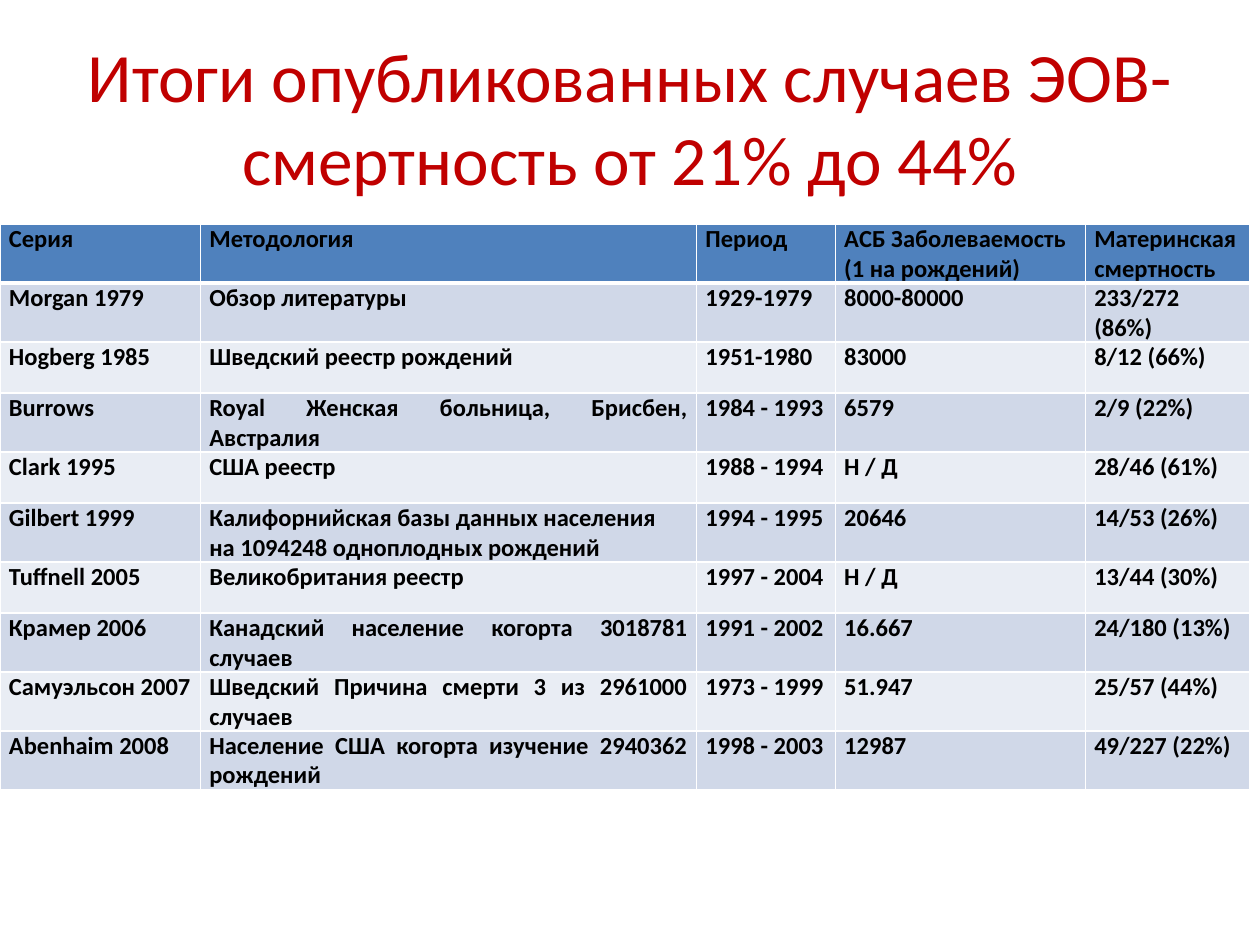
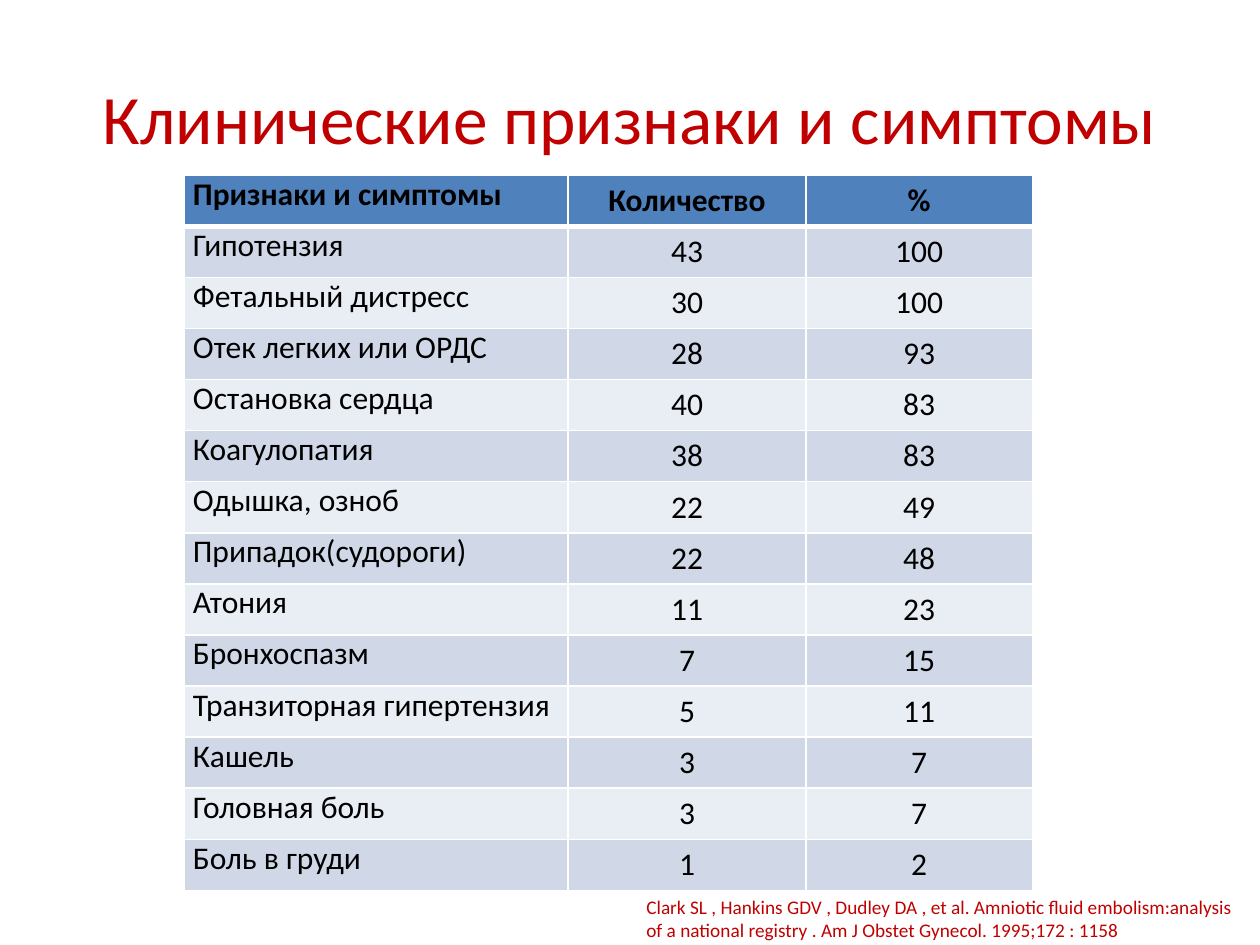
from dataclasses import dataclass

from lxml import etree
from pptx import Presentation
from pptx.dml.color import RGBColor
from pptx.enum.text import MSO_ANCHOR, PP_ALIGN
from pptx.oxml.ns import qn
from pptx.util import Cm, Pt

LEFT, CENTER, JUSTIFY = PP_ALIGN.LEFT, PP_ALIGN.CENTER, PP_ALIGN.JUSTIFY
TOP, MIDDLE = MSO_ANCHOR.TOP, MSO_ANCHOR.MIDDLE
BLANK_LAYOUT = 6


@dataclass(frozen=True)
class Theme:
    font: str = "Calibri"
    accent: str = "C00000"
    text: str = "000000"
    header_fill: str = "4F81BD"
    band_fills: tuple = ("D0D8E8", "E9EDF4")
    border: str = "FFFFFF"
    border_width: float = 1
    header_border_width: float = 3
    title_size: float = 39.6
    studies_size: float = 14
    symptoms_size: float = 18
    citation_size: float = 11


def write_text(frame, text, *, font, size, color, bold=False, align=LEFT):
    """Fill a text frame with one paragraph per line of text."""
    for index, line in enumerate(text.split("\n")):
        paragraph = frame.paragraphs[0] if index == 0 else frame.add_paragraph()
        paragraph.alignment = align
        run = paragraph.add_run()
        run.text = line
        run.font.name = font
        run.font.size = Pt(size)
        run.font.bold = bold
        run.font.color.rgb = RGBColor.from_string(color)


class SlideBuilder:
    def __init__(self, presentation, theme):
        self.presentation = presentation
        self.theme = theme
        self.slide = None

    def new_slide(self, title):
        layout = self.presentation.slide_layouts[BLANK_LAYOUT]
        self.slide = self.presentation.slides.add_slide(layout)
        self.text_box(title, 1.27, 0.76, 22.86, 3.18, anchor=MIDDLE,
                      size=self.theme.title_size, align=CENTER)

    def text_box(self, text, left, top, width, height, *, size, anchor=TOP, align=LEFT):
        shape = self.slide.shapes.add_textbox(Cm(left), Cm(top), Cm(width), Cm(height))
        frame = shape.text_frame
        frame.word_wrap = True
        frame.vertical_anchor = anchor
        write_text(frame, text, font=self.theme.font, size=size,
                   color=self.theme.accent, align=align)

    def table(self, rows, left, top, column_widths, row_height, *, size, formats,
              bold_body=False):
        """Draw a banded table; formats holds (align, anchor) for each column."""
        shape = self.slide.shapes.add_table(
            len(rows), len(column_widths), Cm(left), Cm(top),
            Cm(sum(column_widths)), Cm(row_height * len(rows)))
        table = shape.table
        table.horz_banding = False
        for column, width in zip(table.columns, column_widths):
            column.width = Cm(width)
        for row_index, (row, values) in enumerate(zip(table.rows, rows)):
            row.height = Cm(row_height)
            is_header = row_index == 0
            fill = (self.theme.header_fill if is_header
                    else self.theme.band_fills[(row_index - 1) % 2])
            for cell, value, (align, anchor) in zip(row.cells, values, formats):
                self.style_cell(cell, fill, anchor, row_index)
                write_text(cell.text_frame, value, font=self.theme.font, size=size,
                           color=self.theme.text, bold=is_header or bold_body, align=align)

    def style_cell(self, cell, fill, anchor, row_index):
        cell.margin_left = cell.margin_right = Cm(0.18)
        cell.margin_top = cell.margin_bottom = 0
        cell.vertical_anchor = anchor
        thin, thick = self.theme.border_width, self.theme.header_border_width
        widths = {"L": thin, "R": thin,
                  "T": thick if row_index == 1 else thin,
                  "B": thick if row_index == 0 else thin}
        properties = cell._tc.get_or_add_tcPr()
        for side, width in widths.items():
            line = etree.SubElement(properties, qn(f"a:ln{side}"), w=str(Pt(width)))
            line_fill = etree.SubElement(line, qn("a:solidFill"))
            etree.SubElement(line_fill, qn("a:srgbClr"), val=self.theme.border)
        cell.fill.solid()
        cell.fill.fore_color.rgb = RGBColor.from_string(fill)


STUDIES = [
    ("Серия", "Методология", "Период", "AСБ Заболеваемость\n(1 на рождений)",
     "Материнская смертность"),
    ("Morgan 1979", "Обзор литературы", "1929-1979", "8000-80000", "233/272 (86%)"),
    ("Hogberg 1985", "Шведский реестр рождений", "1951-1980", "83000", "8/12 (66%)"),
    ("Burrows", "Royal Женская больница, Брисбен, Австралия", "1984 - 1993", "6579",
     "2/9 (22%)"),
    ("Clark 1995", "США реестр", "1988 - 1994", "Н / Д", "28/46 (61%)"),
    ("Gilbert 1999",
     "Калифорнийская базы данных населения\nна 1094248 одноплодных рождений",
     "1994 - 1995", "20646", "14/53 (26%)"),
    ("Tuffnell 2005", "Великобритания реестр", "1997 - 2004", "Н / Д", "13/44 (30%)"),
    ("Крамер 2006", "Канадский население когорта 3018781 случаев", "1991 - 2002",
     "16.667", "24/180 (13%)"),
    ("Самуэльсон 2007", "Шведский Причина смерти 3 из 2961000 случаев",
     "1973 - 1999", "51.947", "25/57 (44%)"),
    ("Abenhaim 2008", "Население США когорта изучение 2940362 рождений",
     "1998 - 2003", "12987", "49/227 (22%)"),
]

SYMPTOMS = [
    ("Признаки и симптомы", "Количество", "%"),
    ("Гипотензия", "43", "100"),
    ("Фетальный дистресс", "30", "100"),
    ("Отек легких или ОРДС", "28", "93"),
    ("Остановка сердца", "40", "83"),
    ("Коагулопатия", "38", "83"),
    ("Одышка, озноб", "22", "49"),
    ("Припадок(судороги)", "22", "48"),
    ("Атония", "11", "23"),
    ("Бронхоспазм", "7", "15"),
    ("Транзиторная гипертензия", "5", "11"),
    ("Кашель", "3", "7"),
    ("Головная боль", "3", "7"),
    ("Боль в груди", "1", "2"),
]

CITATION = ("Clark SL , Hankins GDV , Dudley DA , et al. Amniotic fluid embolism:analysis "
            "of a national registry . Am J Obstet Gynecol. 1995;172 : 1158")
ROW_HEIGHT = 1.03


def main():
    presentation = Presentation()
    presentation.slide_width, presentation.slide_height = Cm(25.4), Cm(19.05)
    theme = Theme()
    builder = SlideBuilder(presentation, theme)

    # Published case series
    builder.new_slide("Итоги опубликованных случаев ЭОВ- смертность от 21% до 44%")
    builder.table(STUDIES, 0, 4.52, (4.04, 10, 2.8, 5.04, 3.32), ROW_HEIGHT,
                  size=theme.studies_size, formats=[(JUSTIFY, TOP)] * 5, bold_body=True)

    # Signs and symptoms
    builder.new_slide("Клинические признаки и симптомы")
    builder.table(SYMPTOMS, 3.71, 3.53, (7.74, 4.8, 4.56), ROW_HEIGHT,
                  size=theme.symptoms_size,
                  formats=[(JUSTIFY, TOP)] + [(CENTER, MIDDLE)] * 2)
    builder.text_box(CITATION, 12.78, 17.93, 12.7, 1.19, size=theme.citation_size)

    presentation.save("out.pptx")


if __name__ == "__main__":
    main()
